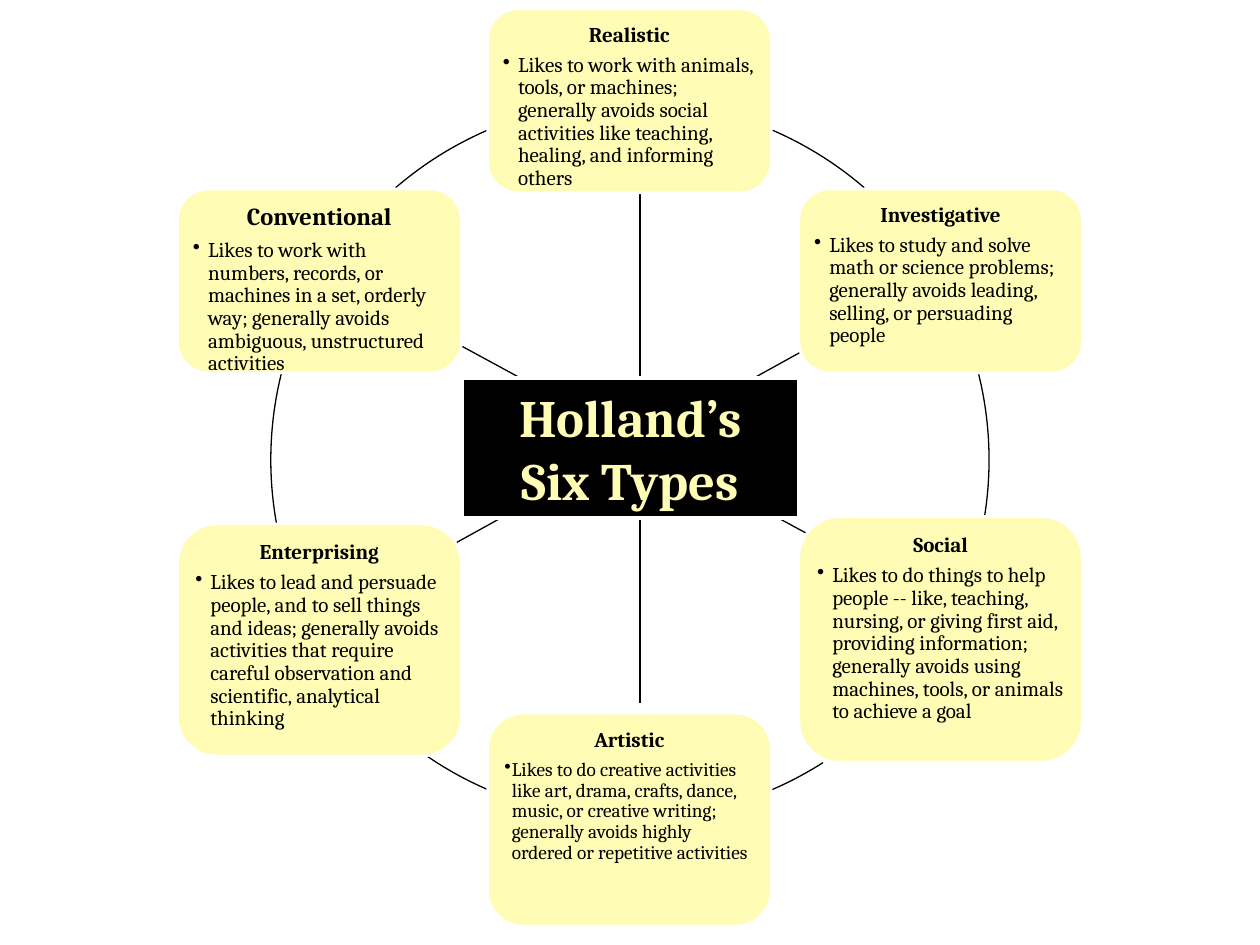
from math import atan2, degrees

from lxml import etree
from pptx import Presentation
from pptx.dml.color import RGBColor
from pptx.enum.shapes import MSO_CONNECTOR, MSO_SHAPE
from pptx.enum.text import MSO_ANCHOR, PP_ALIGN
from pptx.oxml.ns import qn
from pptx.util import Inches, Pt

STRAIGHT = MSO_CONNECTOR.STRAIGHT
ARC, RECT, ROUND_RECT = MSO_SHAPE.ARC, MSO_SHAPE.RECTANGLE, MSO_SHAPE.ROUNDED_RECTANGLE
TOP, MIDDLE = MSO_ANCHOR.TOP, MSO_ANCHOR.MIDDLE
LEFT, CENTER = PP_ALIGN.LEFT, PP_ALIGN.CENTER

FONT = "Cambria"
YELLOW, BLACK, WHITE = "FFFCB5", "000000", "FFFFFF"
CARD_W = 2.25
CENTER_X, CENTER_Y, RADIUS = 5, 3.65, 2.85

# Spokes: x1, y1, x2, y2
SPOKES = [
    (5.08, 1.5, 5.08, 5.58),
    (3.67, 2.75, 6.58, 4.33),
    (3.58, 4.33, 6.58, 2.67),
]

# Visible parts of the ring, clockwise: start and end points
RING_ARCS = [
    ((6.13, 1.04), (6.86, 1.49)),
    ((7.77, 2.97), (7.82, 4.09)),
    ((6.53, 6.05), (6.13, 6.27)),
    ((3.87, 6.27), (3.38, 6)),
    ((2.19, 4.15), (2.23, 2.97)),
    ((3.14, 1.49), (3.87, 1.04)),
]

# Cards: left, top, height, name, name size, text size, indent, text
CARDS = [
    (3.87, 0.07, 1.46, "Realistic", 12, 12, 0.12,
     "Likes to work with animals, tools, or machines; generally avoids social "
     "activities like teaching, healing, and informing others"),
    (6.34, 1.5, 1.46, "Investigative", 12, 12, 0.12,
     "Likes to study and solve math or science problems; generally avoids "
     "leading, selling, or persuading people"),
    (6.34, 4.1, 1.95, "Social", 12, 12, 0.12,
     "Likes to do things to help people -- like, teaching, nursing, or giving "
     "first aid, providing information; generally avoids using machines, tools, "
     "or animals to achieve a goal"),
    (3.87, 5.66, 1.69, "Artistic", 12, 11, 0.06,
     "Likes to do creative activities like art, drama, crafts, dance, music, or "
     "creative writing; generally avoids highly ordered or repetitive activities"),
    (1.41, 4.16, 1.84, "Enterprising", 12, 12, 0.12,
     "Likes to lead and persuade people, and to sell things and ideas; generally "
     "avoids activities that require careful observation and scientific, "
     "analytical thinking"),
    (1.41, 1.5, 1.46, "Conventional", 14, 12, 0.12,
     "Likes to work with numbers, records, or machines in a set, orderly way; "
     "generally avoids ambiguous, unstructured activities"),
]


def rgb(value):
    return RGBColor.from_string(value)


def set_line(shape, color, width):
    shape.line.color.rgb = rgb(color)
    shape.line.width = Pt(width)


def add_spoke(slide, x1, y1, x2, y2):
    c = slide.shapes.add_connector(
        STRAIGHT, Inches(x1), Inches(y1), Inches(x2), Inches(y2))
    set_line(c, BLACK, 0.75)
    etree.SubElement(c._element.spPr, qn("a:effectLst"))


def add_ring_arc(slide, start, end):
    sp = slide.shapes.add_shape(
        ARC, Inches(CENTER_X - RADIUS), Inches(CENTER_Y - RADIUS),
        Inches(2 * RADIUS), Inches(2 * RADIUS))
    sp.shadow.inherit = False
    sp.fill.background()
    set_line(sp, BLACK, 0.75)
    for i, (x, y) in enumerate((start, end)):
        angle = degrees(atan2(y - CENTER_Y, x - CENTER_X)) % 360
        sp.adjustments[i] = angle * 0.6  # 60000 units a degree, scaled by 100000


def add_box(slide, kind, x, y, w, h, fill, line_width, side_inset, anchor):
    sp = slide.shapes.add_shape(kind, Inches(x), Inches(y), Inches(w), Inches(h))
    sp.shadow.inherit = False
    sp.fill.solid()
    sp.fill.fore_color.rgb = rgb(fill)
    set_line(sp, WHITE, line_width)
    tf = sp.text_frame
    tf.word_wrap = True
    tf.vertical_anchor = anchor
    tf.margin_left = tf.margin_right = Inches(side_inset)
    tf.margin_top = tf.margin_bottom = Inches(0.05)
    return sp


def format_paragraph(p, size, color, bold, align):
    p.alignment = align
    for r in p.runs:
        r.font.name = FONT
        r.font.size = Pt(size)
        r.font.bold = bold
        r.font.color.rgb = rgb(color)


def add_bullet(p, indent):
    pPr = p._p.get_or_add_pPr()
    pPr.set("marL", str(Inches(indent)))
    pPr.set("indent", str(-Inches(indent)))
    bu_color = etree.SubElement(pPr, qn("a:buClr"))
    etree.SubElement(bu_color, qn("a:srgbClr"), val=BLACK)
    etree.SubElement(pPr, qn("a:buChar"), char="•")


def add_card(slide, x, y, h, name, name_size, text_size, indent, text):
    sp = add_box(slide, ROUND_RECT, x, y, CARD_W, h, YELLOW, 1.5, 0.05, TOP)
    sp.adjustments[0] = 0.167
    tf = sp.text_frame
    tf.text = name
    heading = tf.paragraphs[0]
    heading.line_spacing = 0.9
    format_paragraph(heading, name_size, BLACK, True, CENTER)

    body = tf.add_paragraph()
    body.text = text
    body.level = 1
    body.line_spacing = 0.9
    body.space_before = Pt(0.35 * name_size)
    add_bullet(body, indent)
    format_paragraph(body, text_size, BLACK, False, LEFT)


def add_title(slide):
    sp = add_box(slide, RECT, 3.67, 3, 2.67, 1.11, BLACK, 2, 0.1, MIDDLE)
    sp.text_frame.text = "Holland’s\nSix Types"
    for p in sp.text_frame.paragraphs:
        format_paragraph(p, 30, YELLOW, True, CENTER)


def main():
    prs = Presentation()
    prs.slide_width, prs.slide_height = Inches(10), Inches(7.5)
    slide = prs.slides.add_slide(prs.slide_layouts[6])

    # Spokes and ring behind the cards
    for spoke in SPOKES:
        add_spoke(slide, *spoke)
    for start, end in RING_ARCS:
        add_ring_arc(slide, start, end)

    # Six types around the title
    for card in CARDS:
        add_card(slide, *card)
    add_title(slide)

    prs.save("out.pptx")


if __name__ == "__main__":
    main()
